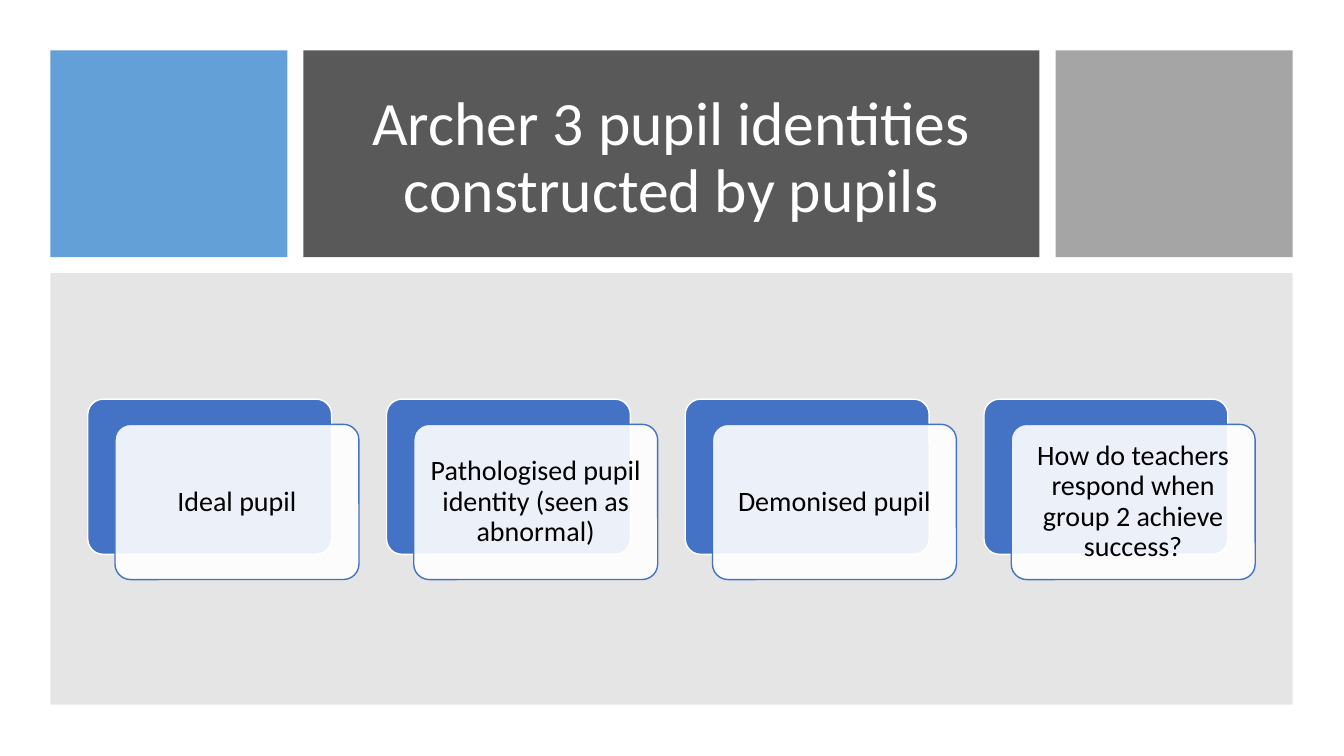
import pptx
import pptx.dml.color
import pptx.enum.shapes
import pptx.enum.text
import pptx.oxml
import pptx.oxml.ns
import pptx.util

RGBColor = pptx.dml.color.RGBColor
SHAPE = pptx.enum.shapes.MSO_SHAPE
Inches = pptx.util.Inches
Pt = pptx.util.Pt

WHITE = RGBColor(0xFF, 0xFF, 0xFF)
BLACK = RGBColor(0x00, 0x00, 0x00)
SKY = RGBColor(0x5B, 0x9B, 0xD5)
BLUE = RGBColor(0x44, 0x72, 0xC4)
CHARCOAL = RGBColor(0x59, 0x59, 0x59)
SILVER = RGBColor(0xA5, 0xA5, 0xA5)
GREY = RGBColor(0x80, 0x80, 0x80)

FONT = "Calibri"
MARGIN = 0.5
GAP = 0.16
SIDE_W, TITLE_W, HEADER_H = 2.35, 7.3, 2.05
PANEL_W, PANEL_H = 12.32, 4.28
CARD_LEFT, CARD_TOP, CARD_STEP = 0.87, 3.96, 2.963
CARD_W, CARD_H = 2.42, 1.54
SHIFT_X, SHIFT_Y = 0.27, 0.25
TEXT_PAD = 0.045

IDENTITIES = [
    "Ideal pupil",
    "Pathologised pupil identity (seen as abnormal)",
    "Demonised pupil",
    "How do teachers respond when group 2 achieve success?",
]


def add_block(shapes, kind, box, fill, opacity=100, line=None):
    """Add a filled shape; opacity is a percentage, line an outline colour."""
    sp = shapes.add_shape(kind, *map(Inches, box))
    sp.shadow.inherit = False
    sp.fill.solid()
    sp.fill.fore_color.rgb = fill
    if opacity < 100:
        clr = sp.fill._xPr.find(".//" + pptx.oxml.ns.qn("a:srgbClr"))
        clr.append(pptx.oxml.parse_xml(
            f'<a:alpha {pptx.oxml.ns.nsdecls("a")} val="{opacity * 1000}"/>'))
    if line is None:
        sp.line.fill.background()
    else:
        sp.line.color.rgb = line
        sp.line.width = Pt(1)
    return sp


def add_label(shapes, box, text, size, color, inset_x, inset_y):
    """Add centred, wrapped text."""
    tf = shapes.add_textbox(*map(Inches, box)).text_frame
    tf.word_wrap = True
    tf.vertical_anchor = pptx.enum.text.MSO_ANCHOR.MIDDLE
    tf.margin_left = tf.margin_right = Inches(inset_x)
    tf.margin_top = tf.margin_bottom = Inches(inset_y)
    p = tf.paragraphs[0]
    p.text = text
    p.alignment = pptx.enum.text.PP_ALIGN.CENTER
    p.line_spacing = 0.9
    p.font.name = FONT
    p.font.size = Pt(size)
    p.font.color.rgb = color


def add_header(shapes, title):
    x = MARGIN
    for width, fill, opacity in [(SIDE_W, SKY, 95), (TITLE_W, CHARCOAL, 100),
                                 (SIDE_W, SILVER, 100)]:
        add_block(shapes, SHAPE.RECTANGLE, (x, MARGIN, width, HEADER_H),
                  fill, opacity)
        x += width + GAP
    add_label(shapes, (3.33, 0.8, 6.66, 1.56), title, 44, WHITE, 0.1, 0.05)


def add_card(shapes, x, text):
    """Add a blue card, a pale card shifted over it, and the text."""
    front_x, front_y = x + SHIFT_X, CARD_TOP + SHIFT_Y
    back = add_block(shapes, SHAPE.ROUNDED_RECTANGLE,
                     (x, CARD_TOP, CARD_W, CARD_H), BLUE, line=WHITE)
    front = add_block(shapes, SHAPE.ROUNDED_RECTANGLE,
                      (front_x, front_y, CARD_W, CARD_H), WHITE, 90, BLUE)
    for sp in (back, front):
        sp.adjustments[0] = 0.1
    add_label(shapes, (front_x + TEXT_PAD, front_y + TEXT_PAD,
                       CARD_W - 2 * TEXT_PAD, CARD_H - 2 * TEXT_PAD),
              text, 20, BLACK, 0.08, 0.08)


def main():
    prs = pptx.Presentation()
    prs.slide_width, prs.slide_height = Inches(13.33), Inches(7.5)
    s = prs.slides.add_slide(prs.slide_layouts[6])
    add_header(s.shapes, "Archer 3 pupil identities constructed by pupils")
    add_block(s.shapes, SHAPE.RECTANGLE,
              (MARGIN, MARGIN + HEADER_H + GAP, PANEL_W, PANEL_H), GREY, 20)
    cards = s.shapes.add_group_shape()
    for i, text in enumerate(IDENTITIES):
        add_card(cards.shapes, CARD_LEFT + i * CARD_STEP, text)
    prs.save("out.pptx")


if __name__ == "__main__":
    main()
